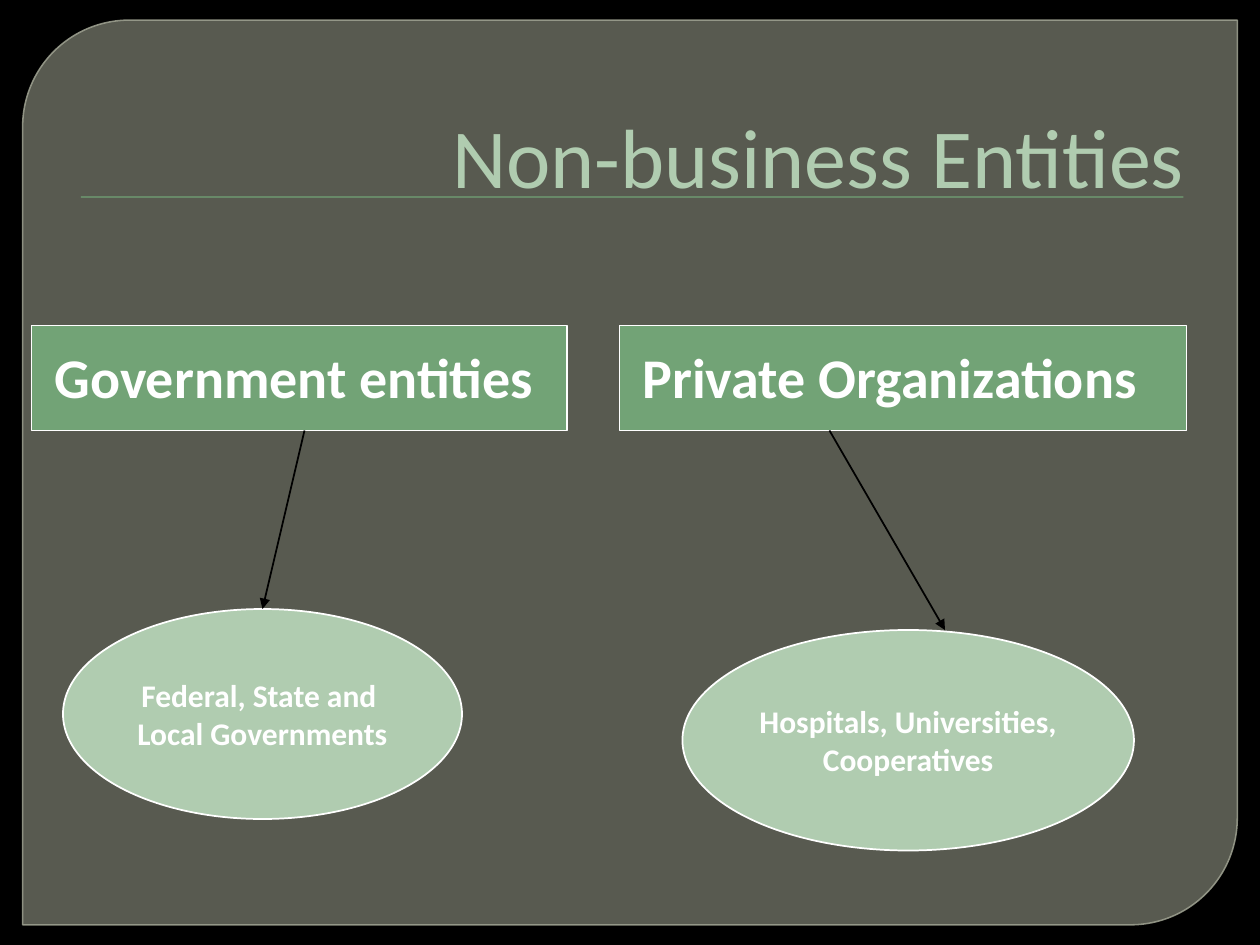
"""Build a slide on the kinds of non-business entities."""
from dataclasses import dataclass

from lxml.etree import SubElement
from pptx import Presentation
from pptx.dml.color import RGBColor
from pptx.enum.shapes import MSO_CONNECTOR, MSO_SHAPE
from pptx.enum.text import MSO_ANCHOR, PP_ALIGN
from pptx.oxml.ns import qn
from pptx.util import Emu, Inches, Pt

BLACK = RGBColor(0x00, 0x00, 0x00)
WHITE = RGBColor(0xFF, 0xFF, 0xFF)
GREEN = RGBColor(0x72, 0xA3, 0x76)
PALE = RGBColor(0xB0, 0xCC, 0xB0)
OLIVE = RGBColor(0x88, 0x8B, 0x7B)
EDGE = RGBColor(0x9D, 0xA0, 0x90)
FONT = "Calibri"
COLS, ROWS = 120, 90
WIDTH, HEIGHT = Inches(10), Inches(7.5)


@dataclass(frozen=True)
class Area:
    """A block of grid columns and rows."""
    col: float
    row: float
    cols: float
    rows: float

    def place(self) -> tuple[Emu, Emu, Emu, Emu]:
        """Return left, top, width and height."""
        return (across(self.col), down(self.row),
                across(self.cols), down(self.rows))


@dataclass(frozen=True)
class Branch:
    """A headed box with an arrow to an oval of examples."""
    head: str
    box: Area
    label: Area
    start: float
    tip: float
    oval: Area
    lines: tuple[str, ...]


BRANCHES = (
    Branch("Government entities", Area(3, 31, 51, 10), Area(4, 32, 49, 7.7),
           29, 25, Area(6, 58, 38, 20),
           ("Federal, State and ", "Local Governments")),
    Branch("Private Organizations", Area(59, 31, 54, 10), Area(60, 32, 54, 7.7),
           79, 90, Area(65, 60, 43, 21),
           ("Hospitals, Universities,", "Cooperatives")),
)


def across(cols: float) -> Emu:
    """Turn columns into a length."""
    return Emu(round(WIDTH * cols / COLS))


def down(rows: float) -> Emu:
    """Turn rows into a length."""
    return Emu(round(HEIGHT * rows / ROWS))


def write(para, text: str, size: int, color: RGBColor, bold: bool) -> None:
    """Add one styled run to a paragraph."""
    run = para.add_run()
    run.text = text
    font = run.font
    font.name, font.size, font.bold = FONT, Pt(size), bold
    font.color.rgb = color


def fade(fill, share: int) -> None:
    """Make a solid fill or line colour partly opaque."""
    tone = next(fill.iter(qn("a:srgbClr")))
    SubElement(tone, qn("a:alpha"), val=str(share * 1000))


def draw(slide, kind, area: Area, color: RGBColor, edge=None, width=1.0):
    """Add a filled shape with an optional outline."""
    shape = slide.shapes.add_shape(kind, *area.place())
    shape.shadow.inherit = False
    shape.fill.solid()
    shape.fill.fore_color.rgb = color
    if edge is None:
        shape.line.fill.background()
    else:
        shape.line.color.rgb = edge
        shape.line.width = Pt(width)
    return shape


def frame(slide) -> None:
    """Add the backdrop panel and the rule below the title."""
    panel = draw(slide, MSO_SHAPE.ROUND_2_DIAG_RECTANGLE,
                 Area(2.16, 1.92, 115.68, 86.16), OLIVE, EDGE, 0.87)
    panel.adjustments[0], panel.adjustments[1] = 0.118, 0
    props = panel.fill._xPr
    fade(props.find(qn("a:solidFill")), 65)
    fade(props.find(qn("a:ln")), 88)
    draw(slide, MSO_SHAPE.RECTANGLE, Area(7.7, 18.7, 105, 0.12), GREEN)


def entitle(slide, text: str) -> None:
    """Place and fill the title."""
    title = slide.shapes.title
    title.left, title.top, title.width, title.height = Area(6, 5.16, 108, 15).place()
    body = title.text_frame
    body.vertical_anchor = MSO_ANCHOR.BOTTOM
    body.word_wrap = True
    para = body.paragraphs[0]
    para.alignment = PP_ALIGN.RIGHT
    write(para, text, 48, PALE, False)


def link(slide, item: Branch, oval) -> None:
    """Draw the arrow from a box to its oval."""
    line = slide.shapes.add_connector(
        MSO_CONNECTOR.STRAIGHT,
        across(item.start), down(item.box.row + item.box.rows),
        across(item.tip), down(item.oval.row))
    if item.tip == item.oval.col + item.oval.cols / 2:
        line.end_connect(oval, 0)
    line.line.color.rgb = BLACK
    line.line.width = Pt(1)
    SubElement(line.line._get_or_add_ln(), qn("a:tailEnd"), type="triangle")
    SubElement(line._element.spPr, qn("a:effectLst"))


def branch(slide, item: Branch) -> None:
    """Draw a box, its heading, its oval and the arrow."""
    draw(slide, MSO_SHAPE.RECTANGLE, item.box, GREEN, WHITE)
    label = slide.shapes.add_textbox(*item.label.place()).text_frame
    label.word_wrap = True
    write(label.paragraphs[0], item.head, 32, WHITE, True)
    oval = draw(slide, MSO_SHAPE.OVAL, item.oval, PALE, WHITE)
    body = oval.text_frame
    body.word_wrap = False
    body.vertical_anchor = MSO_ANCHOR.MIDDLE
    for index, text in enumerate(item.lines):
        para = body.add_paragraph() if index else body.paragraphs[0]
        para.alignment = PP_ALIGN.CENTER
        write(para, text, 18, WHITE, True)
    link(slide, item, oval)


def main() -> None:
    """Build and save the slide."""
    deck = Presentation()
    deck.slide_width, deck.slide_height = WIDTH, HEIGHT
    slide = deck.slides.add_slide(deck.slide_layouts[5])
    back = slide.background.fill
    back.solid()
    back.fore_color.rgb = BLACK
    frame(slide)
    entitle(slide, "Non-business Entities")
    title = slide.shapes.title._element
    title.getparent().append(title)
    for item in BRANCHES:
        branch(slide, item)
    deck.save("out.pptx")


if __name__ == "__main__":
    main()
